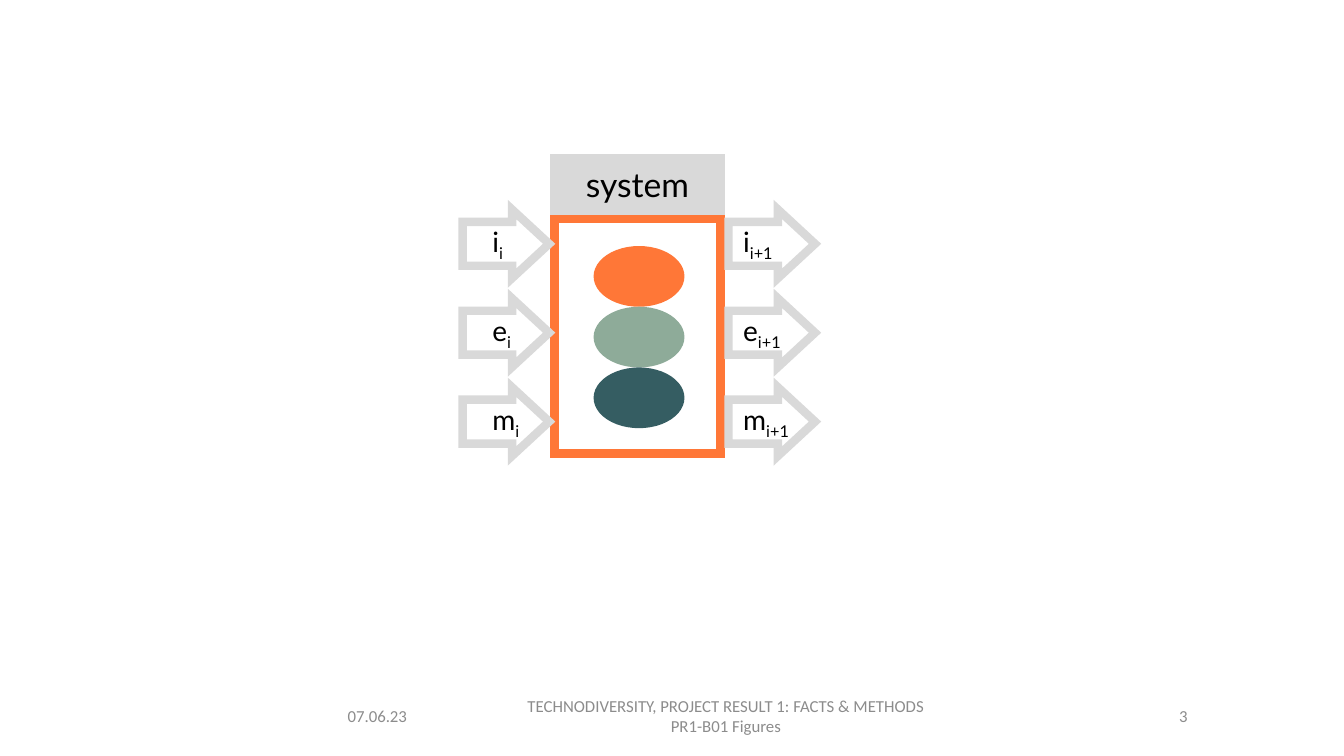
from pptx import Presentation
from pptx.dml.color import RGBColor
from pptx.enum.shapes import MSO_SHAPE
from pptx.enum.text import MSO_ANCHOR, PP_ALIGN
from pptx.oxml.ns import qn
from pptx.util import Cm, Pt
from lxml import etree

RECT, OVAL, ARROW = MSO_SHAPE.RECTANGLE, MSO_SHAPE.OVAL, MSO_SHAPE.RIGHT_ARROW
LEFT, CENTER, RIGHT = PP_ALIGN.LEFT, PP_ALIGN.CENTER, PP_ALIGN.RIGHT
TOP, MIDDLE = MSO_ANCHOR.TOP, MSO_ANCHOR.MIDDLE

WHITE, BLACK, GREY, ORANGE = "FFFFFF", "000000", "D9D9D9", "FF7737"
FOOTER_GREY = "8C8C8C"

HEADER = "system"
ELEMENTS = [ORANGE, "8EAB99", "355D62"]
FLOWS = ["i", "e", "m"]
# subscript, arrow left, label left
SIDES = [("i", 11.66, 12.16), ("i+1", 18.36, 18.48)]
# lines, left, width, alignment
FOOTER = [
    (["07.06.23"], 8.51, 3.4, LEFT),
    (["TECHNODIVERSITY, PROJECT RESULT 1: FACTS & METHODS",
      "PR1-B01 Figures"], 12.34, 11.91, CENTER),
    (["3"], 24.82, 5.36, RIGHT),
]

BOX_LEFT, BOX_W = 13.97, 4.19
OVAL_LEFT, OVAL_TOP, OVAL_W, OVAL_H = 14.96, 6.2, 2.29, 1.53
ARROW_TOP, ARROW_W, ARROW_H, ARROW_STEP = 5.28, 2.18, 1.73, 2.24
LABEL_DROP = 0.26


def rgb(value):
    return RGBColor.from_string(value)


def write(tf, lines, size=20, font="Lato", color=BLACK, align=LEFT,
          anchor=TOP, sub=""):
    """Fill a text frame with lines, each followed by an optional subscript."""
    tf.word_wrap = True
    tf.vertical_anchor = anchor
    for n, line in enumerate(lines):
        p = tf.add_paragraph() if n else tf.paragraphs[0]
        p.alignment = align
        for text, is_sub in ((line, False), (sub, True)):
            if not text:
                continue
            r = p.add_run()
            r.text = text
            r.font.size = Pt(size)
            r.font.name = font
            r.font.color.rgb = rgb(color)
            if is_sub:
                r.font._element.set("baseline", "-25000")


def add_text(s, lines, left, top, width, height, **fmt):
    tb = s.shapes.add_textbox(Cm(left), Cm(top), Cm(width), Cm(height))
    write(tb.text_frame, lines, **fmt)


def add_shape(s, kind, left, top, width, height, fill, line=None):
    sp = s.shapes.add_shape(kind, Cm(left), Cm(top), Cm(width), Cm(height))
    sp.shadow.inherit = False
    sp.fill.solid()
    sp.fill.fore_color.rgb = rgb(fill)
    if line:
        sp.line.color.rgb = rgb(line)
        sp.line.width = Pt(6)
        ln = sp.line._get_or_add_ln()
        etree.SubElement(ln, qn("a:miter")).set("lim", "800000")
    else:
        sp.line.fill.background()
    return sp


def main():
    prs = Presentation()
    prs.slide_width, prs.slide_height = Cm(33.87), Cm(19.05)
    s = prs.slides.add_slide(prs.slide_layouts[6])

    for lines, left, width, align in FOOTER:
        add_text(s, lines, left, 17.53, width, 1.02, size=12, font="Calibri",
                 color=FOOTER_GREY, align=align, anchor=MIDDLE)

    add_shape(s, RECT, BOX_LEFT, 5.51, BOX_W, 5.92, WHITE, ORANGE)
    for n, color in enumerate(ELEMENTS):
        add_shape(s, OVAL, OVAL_LEFT, OVAL_TOP + n * OVAL_H, OVAL_W, OVAL_H, color)
    header = add_shape(s, RECT, BOX_LEFT, 3.99, BOX_W, 1.32, GREY, GREY)
    write(header.text_frame, [HEADER], size=24, align=CENTER, anchor=MIDDLE)

    for sub, arrow_left, label_left in SIDES:
        for n, flow in enumerate(FLOWS):
            top = ARROW_TOP + n * ARROW_STEP
            arrow = add_shape(s, ARROW, arrow_left, top, ARROW_W, ARROW_H, WHITE, GREY)
            arrow.adjustments[0] = 0.64
            arrow.adjustments[1] = 0.54
            add_text(s, [flow], label_left, top + LABEL_DROP, 2.44, 1.12, sub=sub)

    prs.save("out.pptx")


if __name__ == "__main__":
    main()
